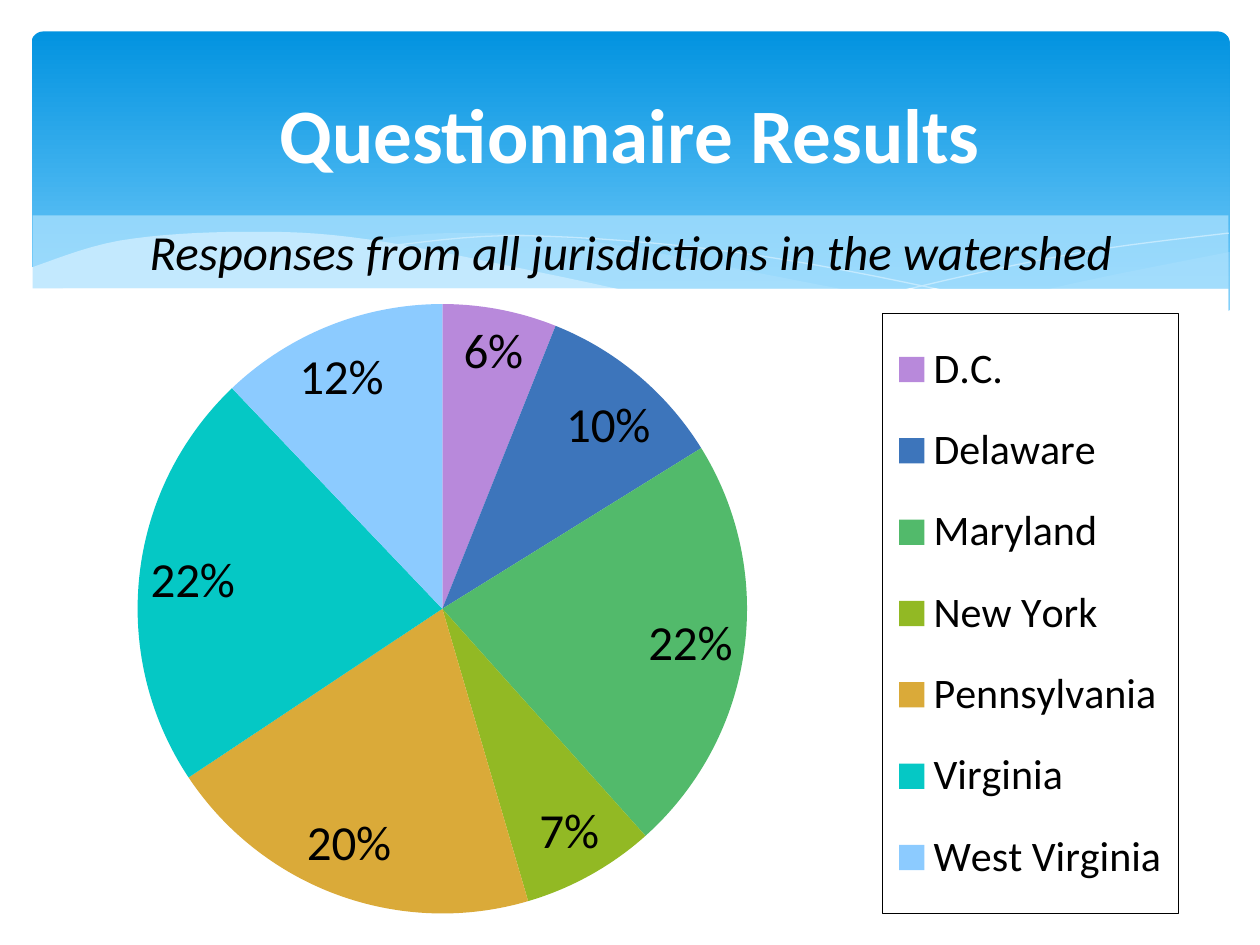
from dataclasses import dataclass

from lxml import etree
from pptx import Presentation
from pptx.chart import data
from pptx.dml import color
from pptx.enum import chart as ce, shapes, text
from pptx.oxml import ns, parse_xml
from pptx.util import Inches, Pt


@dataclass(frozen=True)
class Theme:
    font: str = "Calibri"
    white: str = "FFFFFF"
    black: str = "000000"
    sky_top: str = "0293E0"
    sky_bottom: str = "83D3FE"
    wave: str = "C6E7FC"
    band: str = "ADE2FE"
    slices: tuple = ("B889DB", "3D75BB", "52BA6B", "92B924", "DAAA39", "05C8C5", "8CCBFF")
    title: int = 44
    subtitle: int = 28
    label: int = 28
    legend: int = 24


theme = Theme()
rgb = color.RGBColor.from_string


def write(tf, words, size, ink, anchor, bold=False, italic=False):
    tf.word_wrap = True
    tf.vertical_anchor = anchor
    p = tf.paragraphs[0]
    p.alignment = text.PP_ALIGN.CENTER
    r = p.add_run()
    r.text = words
    f = r.font
    f.name, f.size, f.bold, f.italic = theme.font, Pt(size), bold, italic
    f.color.rgb = rgb(ink)


def paint(sp, fill=None, opacity=100, line=None):
    sp.shadow.inherit = False
    sp.fill.background()
    sp.line.fill.background()
    if fill:
        sp.fill.solid()
        sp.fill.fore_color.rgb = rgb(fill)
        clr = sp.element.spPr.find(".//" + ns.qn("a:srgbClr"))
        etree.SubElement(clr, ns.qn("a:alpha"), val=str(opacity * 1000))
    if line:
        sp.line.color.rgb = rgb(line)
        sp.line.width = Pt(0)


prs = Presentation()
prs.slide_width, prs.slide_height = Inches(10), Inches(7.5)
s = prs.slides.add_slide(prs.slide_layouts[5])

sky = s.shapes.add_shape(shapes.MSO_SHAPE.ROUNDED_RECTANGLE,
                         Inches(0.25), Inches(0.25), Inches(9.51), Inches(2.7))
sky.adjustments[0] = 0.034
paint(sky)
sky.fill.gradient()
sky.fill.gradient_angle = 270
top_stop, bottom_stop = sky.fill.gradient_stops
top_stop.color.rgb = rgb(theme.sky_top)
bottom_stop.color.rgb = rgb(theme.sky_bottom)
bottom_stop.position = 0.9

left, right, base = 0.23, 9.77, 3.29
right_swell_top = [(9.76, 2), (8.61, 2.23), (7.53, 2.48), (6.61, 2.65)]
right_swell_bottom = [(6.61, 2.65), (7.45, 2.75), (8.24, 2.77), (9.05, 2.69), (9.76, 2.47)]
middle_swell_top = [(2.86, 1.91), (3.61, 1.85), (4.65, 1.91), (6.29, 2.22), (8.93, 2.73)]
middle_swell_bottom = [(8.93, 2.73), (8.07, 2.78), (6.8, 2.68), (4.49, 2.22), (2.86, 1.91)]
long_crest = [(3.09, 1.95), (4.16, 1.87), (5.82, 2), (7.6, 2.33), (9.07, 2.72)]
right_crest = [(6.13, 2.57), (7.48, 2.23), (8.66, 1.99), (9.75, 1.85)]
front_wave_top = [(left, 2.13), (0.95, 1.91), (1.93, 1.84), (2.92, 1.9), (4.47, 2.2),
                  (6.03, 2.54), (7.26, 2.72), (8.09, 2.77), (8.99, 2.69), (right, 2.46)]
front_wave_base = [(right, base), (left, base)]

steps = 8
for edges, look in [
    ([right_swell_top, right_swell_bottom], {"fill": theme.wave, "opacity": 29}),
    ([middle_swell_top, middle_swell_bottom], {"fill": theme.wave, "opacity": 40}),
    ([long_crest], {"line": theme.white}),
    ([right_crest], {"line": theme.white}),
    ([front_wave_top, front_wave_base], {"fill": theme.white}),
]:
    outline = []
    for knots in edges:
        padded = [knots[0], *knots, knots[-1]]
        for before, start, end, after in zip(padded, padded[1:], padded[2:], padded[3:]):
            for t in (i / steps for i in range(steps)):
                outline.append([
                    Inches(b + (c - a) * t / 2 + (2 * a - 5 * b + 4 * c - d) * t ** 2 / 2
                           + (3 * b - a - 3 * c + d) * t ** 3 / 2)
                    for a, b, c, d in zip(before, start, end, after)])
        outline.append([Inches(v) for v in knots[-1]])
    builder = s.shapes.build_freeform(*outline[0])
    builder.add_line_segments(outline[1:], close="fill" in look)
    paint(builder.convert_to_shape(), **look)

title = s.shapes.title
title.element.getparent().append(title.element)
title.left, title.top, title.width, title.height = map(Inches, (0.5, 0.37, 9, 1.37))
write(title.text_frame, "Questionnaire Results", theme.title, theme.white,
      text.MSO_ANCHOR.MIDDLE, bold=True)

band = s.shapes.add_shape(shapes.MSO_SHAPE.RECTANGLE,
                          Inches(0.26), Inches(1.71), Inches(9.49), Inches(0.58))
paint(band, theme.band, opacity=73)
write(band.text_frame, "Responses from all jurisdictions in the watershed",
      theme.subtitle, theme.black, text.MSO_ANCHOR.TOP, italic=True)

responses = {"D.C.": 6, "Delaware": 10, "Maryland": 22, "New York": 7,
             "Pennsylvania": 20, "Virginia": 22, "West Virginia": 12}
cd = data.CategoryChartData()
cd.categories = list(responses)
cd.add_series("Series 1", list(responses.values()))
chart = s.shapes.add_chart(ce.XL_CHART_TYPE.PIE, Inches(0.5), Inches(2.29),
                           Inches(9.25), Inches(5.13), cd).chart
chart.has_title = False

plot = chart.plots[0]
plot.vary_by_categories = True
for i, ink in enumerate(theme.slices):
    slice_format = plot.series[0].points[i].format
    slice_format.fill.solid()
    slice_format.fill.fore_color.rgb = rgb(ink)
    slice_format.line.fill.background()

plot.has_data_labels = True
labels = plot.data_labels
labels.show_percentage, labels.show_value = True, False
labels.number_format, labels.number_format_is_linked = "0%", False
labels.position = ce.XL_LABEL_POSITION.BEST_FIT

chart.has_legend = True
legend = chart.legend
legend.position = ce.XL_LEGEND_POSITION.RIGHT
legend.include_in_layout = False

for part, size in [(chart, 10), (labels, theme.label), (legend, theme.legend)]:
    part.font.name, part.font.size = theme.font, Pt(size)
    part.font.color.rgb = rgb(theme.black)

chart_space = chart.element
plot_area = chart_space.find(".//" + ns.qn("c:plotArea"))
legend_box = chart_space.find(".//" + ns.qn("c:legend"))
for area, slot, target, box in [
    (plot_area, 0, '<c:layoutTarget val="inner"/>', (0.064, 0.024, 0.523, 0.943)),
    (legend_box, 1, "", (0.703, 0.039, 0.254, 0.928)),
]:
    for old in area.findall(ns.qn("c:layout")):
        area.remove(old)
    places = "".join(f'<c:{side} val="{value}"/>' for side, value in zip("xywh", box))
    area.insert(slot, parse_xml(
        f'<c:layout {ns.nsdecls("c")}><c:manualLayout>{target}<c:xMode val="edge"/>'
        f'<c:yMode val="edge"/>{places}</c:manualLayout></c:layout>'))

solid = '<a:solidFill><a:srgbClr val="{}"/></a:solidFill>'
for area, previous, fill, line in [
    (chart_space, "c:chart", solid.format(theme.white), "<a:noFill/>"),
    (legend_box, "c:overlay", "<a:noFill/>", solid.format(theme.black)),
]:
    area.find(ns.qn(previous)).addnext(parse_xml(
        f'<c:spPr {ns.nsdecls("c", "a")}>{fill}<a:ln w="{Pt(0.75)}">{line}</a:ln></c:spPr>'))

prs.save("out.pptx")
